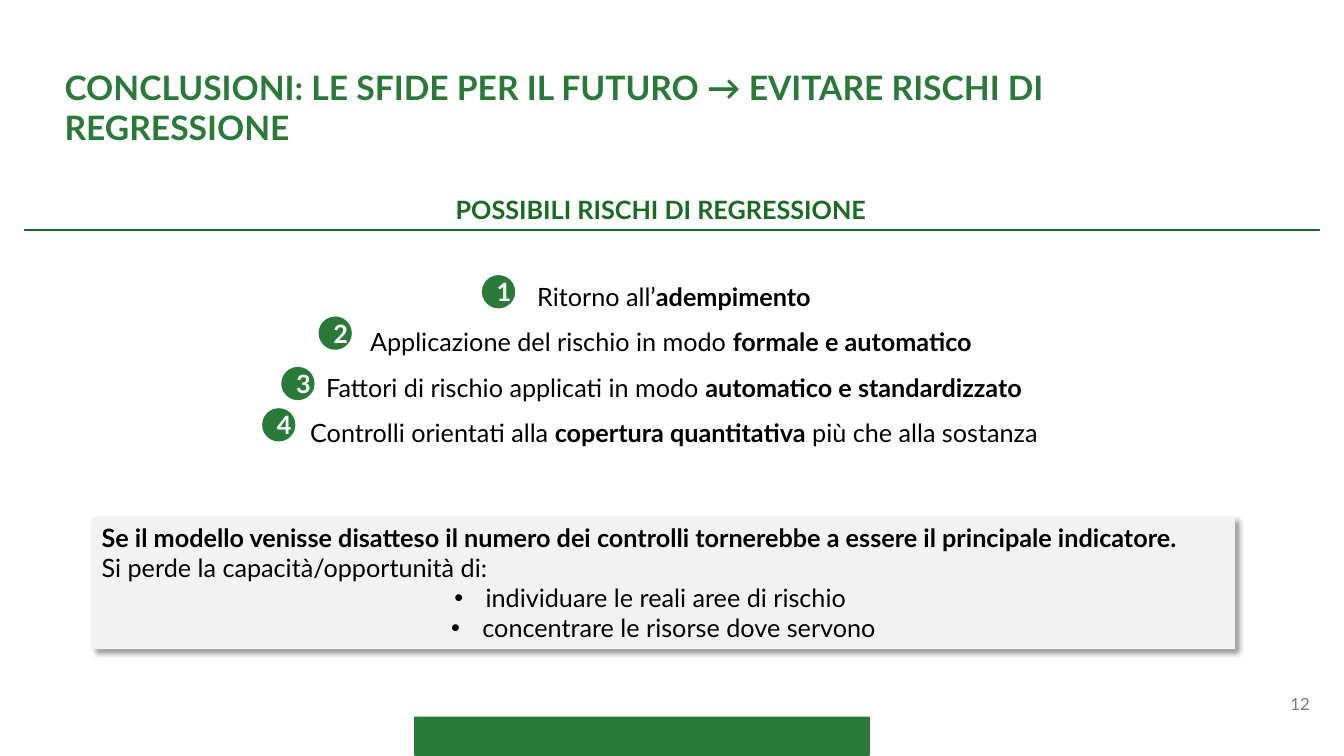
from dataclasses import dataclass

from lxml.etree import SubElement
from pptx import Presentation
from pptx.dml.color import RGBColor
from pptx.enum.shapes import MSO_CONNECTOR, MSO_SHAPE
from pptx.enum.text import MSO_ANCHOR as Anchor, MSO_AUTO_SIZE as AutoSize, PP_ALIGN as Align
from pptx.oxml import parse_xml
from pptx.oxml.ns import nsdecls, qn
from pptx.util import Inches, Pt


@dataclass(frozen=True)
class Theme:
    """Colours, font and type sizes of the slide."""
    font: str = "Lato"
    green: str = "297A38"
    dark_green: str = "196B24"
    panel: str = "F2F2F2"
    white: str = "FFFFFF"
    black: str = "000000"
    grey: str = "797979"
    title: int = 24
    body: int = 18
    small: int = 12


THEME = Theme()
RISKS = [
    (4.78, 2.73, [("Ritorno all’", False), ("adempimento", True)]),
    (3.16, 3.14, [("Applicazione del rischio in modo ", False), ("formale e automatico ", True)]),
    (2.79, 3.64, [("Fattori di rischio applicati in modo ", False),
                  ("automatico e standardizzato", True)]),
    (2.6, 4.05, [("Controlli orientati alla ", False), ("copertura quantitativa", True),
                 (" più che alla sostanza", False)]),
]
LOSSES = [("individuare le reali aree di rischio", 0.26), ("concentrare le risorse dove servono", 0)]


def write(paragraph, text, size=THEME.body, color=THEME.black, bold=False, align=Align.LEFT):
    """Add a formatted run to a paragraph."""
    paragraph.alignment = align
    run = paragraph.add_run()
    run.text = text
    font = run.font
    font.name, font.size, font.bold = THEME.font, Pt(size), bold
    font.color.rgb = RGBColor.from_string(color)


def paragraphs(frame, count):
    """Return the first paragraph of a frame followed by new ones."""
    return [frame.paragraphs[0]] + [frame.add_paragraph() for _ in range(count - 1)]


def add_filled(shapes, kind, box, fill):
    """Add a preset shape with a plain fill, no line and no shadow."""
    shape = shapes.add_shape(kind, *map(Inches, box))
    shape.shadow.inherit = False
    shape.fill.solid()
    shape.fill.fore_color.rgb = RGBColor.from_string(fill)
    shape.line.fill.background()
    return shape


def add_text_box(shapes, box, anchor=Anchor.TOP):
    """Add a wrapping text box and return its frame."""
    frame = shapes.add_textbox(*map(Inches, box)).text_frame
    frame.word_wrap = True
    frame.vertical_anchor = anchor
    return frame


def add_backdrop(slide, box):
    """Place the green footer bar and the white page panel over its top edge."""
    left, top, width, height = box
    bar = add_filled(slide.shapes, MSO_SHAPE.RECTANGLE,
                     (left + 3.86, top + 6.83, 4.5, 0.4), THEME.green)
    bar.line.color.rgb = RGBColor.from_string(THEME.green)
    bar.line.width = Pt(1.5)
    add_filled(slide.shapes, MSO_SHAPE.RECTANGLE, box, THEME.white)


def add_title(slide, box):
    """Format the title placeholder and bring it in front of the backdrop."""
    title = slide.shapes.title
    title.left, title.top, title.width, title.height = map(Inches, box)
    frame = title.text_frame
    frame.word_wrap, frame.auto_size = True, AutoSize.NONE
    frame.vertical_anchor = Anchor.TOP
    write(frame.paragraphs[0],
          "CONCLUSIONI: LE SFIDE PER IL FUTURO → EVITARE RISCHI DI REGRESSIONE",
          size=THEME.title, color=THEME.green, bold=True)
    title.element.getparent().append(title.element)


def add_heading(slide, box):
    """Place the section heading above its rule."""
    left, top, width, height = box
    frame = add_text_box(slide.shapes, (left + 4.18, top, 4.48, height))
    write(frame.paragraphs[0], "POSSIBILI RISCHI DI REGRESSIONE",
          color=THEME.dark_green, bold=True)
    bottom = Inches(top + height)
    rule = slide.shapes.add_connector(MSO_CONNECTOR.STRAIGHT, Inches(left), bottom,
                                      Inches(left + width), bottom)
    rule.line.color.rgb = RGBColor.from_string(THEME.dark_green)
    rule.line.width = Pt(1.5)
    SubElement(rule.element.spPr, qn("a:effectLst"))


def add_risks(slide, box):
    """Group the centred list of risks with its numbered badges."""
    shapes = slide.shapes.add_group_shape().shapes
    left, top = box[:2]
    frame = add_text_box(shapes, box)
    rows = zip(paragraphs(frame, len(RISKS)), RISKS)
    for number, (paragraph, (badge_left, badge_top, parts)) in enumerate(rows, 1):
        paragraph.line_spacing = 1.5
        for text, bold in parts:
            write(paragraph, text, bold=bold, align=Align.CENTER)
        badge = add_filled(shapes, MSO_SHAPE.OVAL, (badge_left, badge_top, 0.33, 0.33), THEME.green)
        badge.text_frame.vertical_anchor = Anchor.MIDDLE
        write(badge.text_frame.paragraphs[0], str(number), color=THEME.white,
              bold=True, align=Align.CENTER)


def add_shadow(shape):
    """Give a shape a soft shadow towards the lower right."""
    effects = shape.element.spPr.find(qn("a:effectLst"))
    effects.append(parse_xml(
        f'<a:outerShdw {nsdecls("a")} blurRad="{Pt(4)}" dist="{Pt(3)}" dir="2700000" '
        f'algn="tl" rotWithShape="0"><a:srgbClr val="{THEME.black}">'
        '<a:alpha val="40000"/></a:srgbClr></a:outerShdw>'))


def add_bullet(paragraph, right_margin):
    """Give a paragraph a hanging bullet."""
    properties = paragraph._p.get_or_add_pPr()
    properties.set("marL", str(Inches(0.31)))
    properties.set("marR", str(Inches(right_margin)))
    properties.set("indent", str(-Inches(0.31)))
    SubElement(properties, qn("a:buFont"), typeface="Arial")
    SubElement(properties, qn("a:buChar"), char="•")


def add_warning(slide, box):
    """Place the shaded panel on what would be lost."""
    panel = add_filled(slide.shapes, MSO_SHAPE.RECTANGLE, box, THEME.panel)
    add_shadow(panel)
    frame = panel.text_frame
    frame.vertical_anchor = Anchor.TOP
    lead, intro, *items = paragraphs(frame, 2 + len(LOSSES))
    write(lead, "Se il modello venisse disatteso il numero dei controlli tornerebbe "
                "a essere il principale indicatore.", bold=True)
    write(intro, "Si perde la capacità/opportunità di:")
    for paragraph, (text, right_margin) in zip(items, LOSSES):
        add_bullet(paragraph, right_margin)
        write(paragraph, text, align=Align.CENTER)


def add_page_number(slide, box):
    """Place the page number."""
    frame = add_text_box(slide.shapes, box, anchor=Anchor.MIDDLE)
    write(frame.paragraphs[0], "12", size=THEME.small, color=THEME.grey, align=Align.RIGHT)


def main():
    """Build and save the slide."""
    presentation = Presentation()
    presentation.slide_width, presentation.slide_height = Inches(13.33), Inches(7.5)
    slide = presentation.slides.add_slide(presentation.slide_layouts[5])
    add_backdrop(slide, (0.26, 0.26, 12.84, 6.85))
    add_title(slide, (0.54, 0.61, 12.09, 0.5))
    add_heading(slide, (0.24, 1.88, 12.85, 0.4))
    add_warning(slide, (0.91, 5.13, 11.34, 1.31))
    add_risks(slide, (0.4, 2.59, 12.57, 1.87))
    add_page_number(slide, (10.09, 6.78, 3, 0.4))
    presentation.save("out.pptx")


if __name__ == "__main__":
    main()
